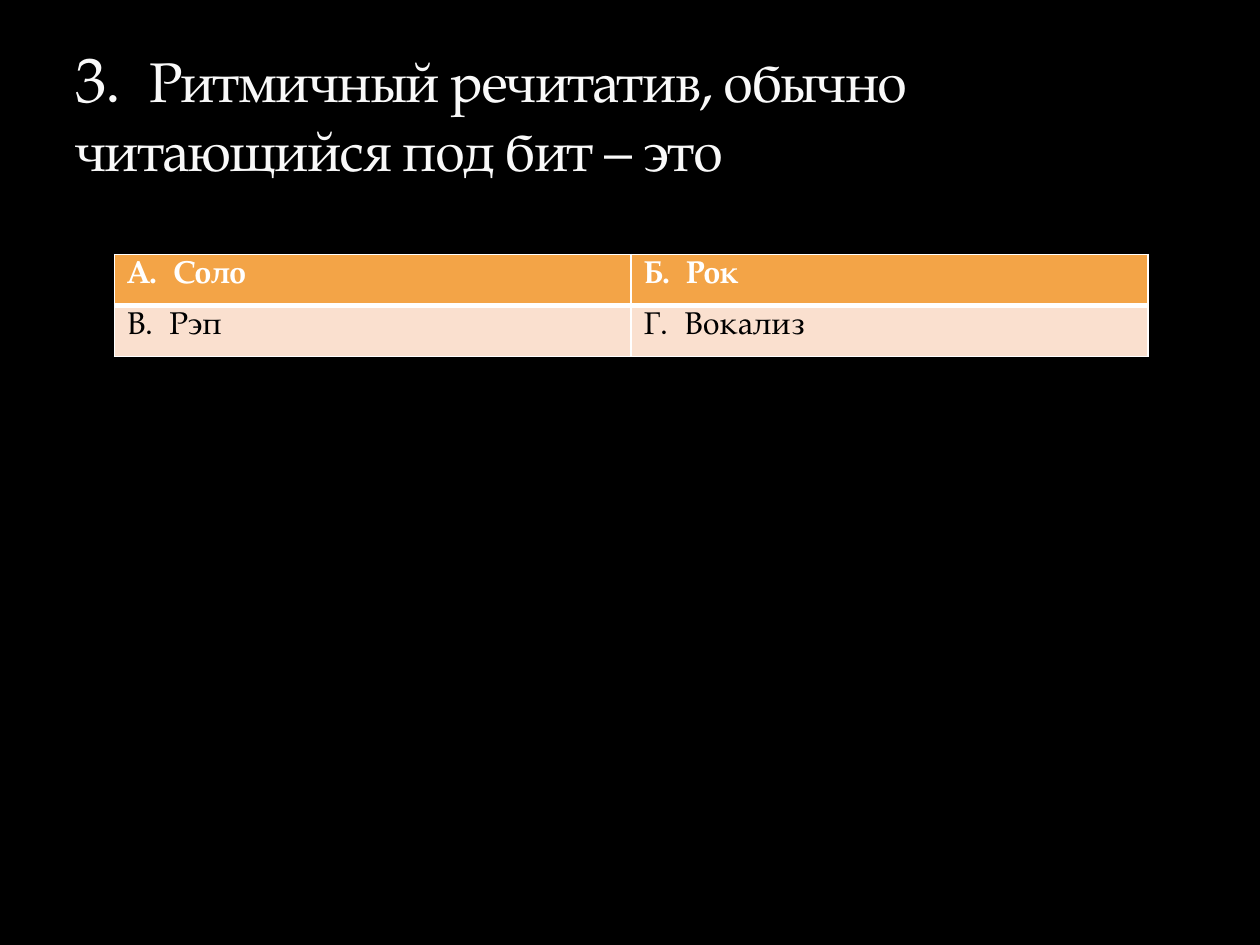
from typing import NamedTuple

from lxml.etree import SubElement
from pptx import Presentation
from pptx.dml.color import RGBColor
from pptx.enum.text import MSO_ANCHOR, MSO_AUTO_SIZE, PP_ALIGN
from pptx.oxml.ns import qn
from pptx.util import Inches, Pt

FONT = "TeX Gyre Pagella"
WHITE = "FFFFFF"


class AnswerRow(NamedTuple):
    answers: tuple[str, str]
    fill: str
    color: str
    bold: bool
    top_border: float
    bottom_border: float


ANSWER_ROWS = [
    AnswerRow(("А.  Соло", "Б.  Рок"), "F3A447", WHITE, True, 1, 3),
    AnswerRow(("В.  Рэп", "Г.  Вокализ"), "FAE0CF", "000000", False, 3, 1),
]


def rgb(value: str) -> RGBColor:
    return RGBColor.from_string(value)


def add_border(cell, side: str, width: float) -> None:
    line = SubElement(cell._tc.get_or_add_tcPr(), qn(f"a:ln{side}"), w=str(Pt(width)))
    fill = SubElement(line, qn("a:solidFill"))
    SubElement(fill, qn("a:srgbClr"), val=WHITE)


def write_question(slide, number: str, wording: str) -> None:
    title = slide.shapes.title
    title.left, title.top = Inches(0.5), Inches(0.17)
    title.width, title.height = Inches(9), Inches(1.33)
    frame = title.text_frame
    frame.word_wrap = True
    frame.auto_size = MSO_AUTO_SIZE.NONE
    frame.vertical_anchor = MSO_ANCHOR.BOTTOM
    question = frame.paragraphs[0]
    question.alignment = PP_ALIGN.LEFT
    question.font.name = FONT
    question.font.color.rgb = rgb("F9F9F9")
    for text, size in ((number, 36), (wording, 32)):
        run = question.add_run()
        run.text = text
        run.font.size = Pt(size)
        run.font._element.set("spc", "-100")


def fill_answer(cell, text: str, row: AnswerRow) -> None:
    cell.text = text
    font = cell.text_frame.paragraphs[0].font
    font.name = FONT
    font.size = Pt(18)
    font.bold = row.bold
    font.color.rgb = rgb(row.color)
    # The schema wants the borders ahead of the fill.
    borders = {"L": 1, "R": 1, "T": row.top_border, "B": row.bottom_border}
    for side, width in borders.items():
        add_border(cell, side, width)
    cell.fill.solid()
    cell.fill.fore_color.rgb = rgb(row.fill)


def add_answers(slide, rows: list[AnswerRow]) -> None:
    table = slide.shapes.add_table(
        len(rows), 2, Inches(0.91), Inches(2.02), Inches(8.2), Inches(0.81)
    ).table
    for row_index, row in enumerate(rows):
        for column, text in enumerate(row.answers):
            fill_answer(table.cell(row_index, column), text, row)


def main() -> None:
    quiz = Presentation()
    quiz.slide_width, quiz.slide_height = Inches(10), Inches(7.5)
    slide = quiz.slides.add_slide(quiz.slide_layouts[5])
    slide.background.fill.solid()
    slide.background.fill.fore_color.rgb = rgb("000000")
    write_question(slide, "3.  ", "Ритмичный речитатив, обычно читающийся под бит – это")
    add_answers(slide, ANSWER_ROWS)
    quiz.save("out.pptx")


if __name__ == "__main__":
    main()
